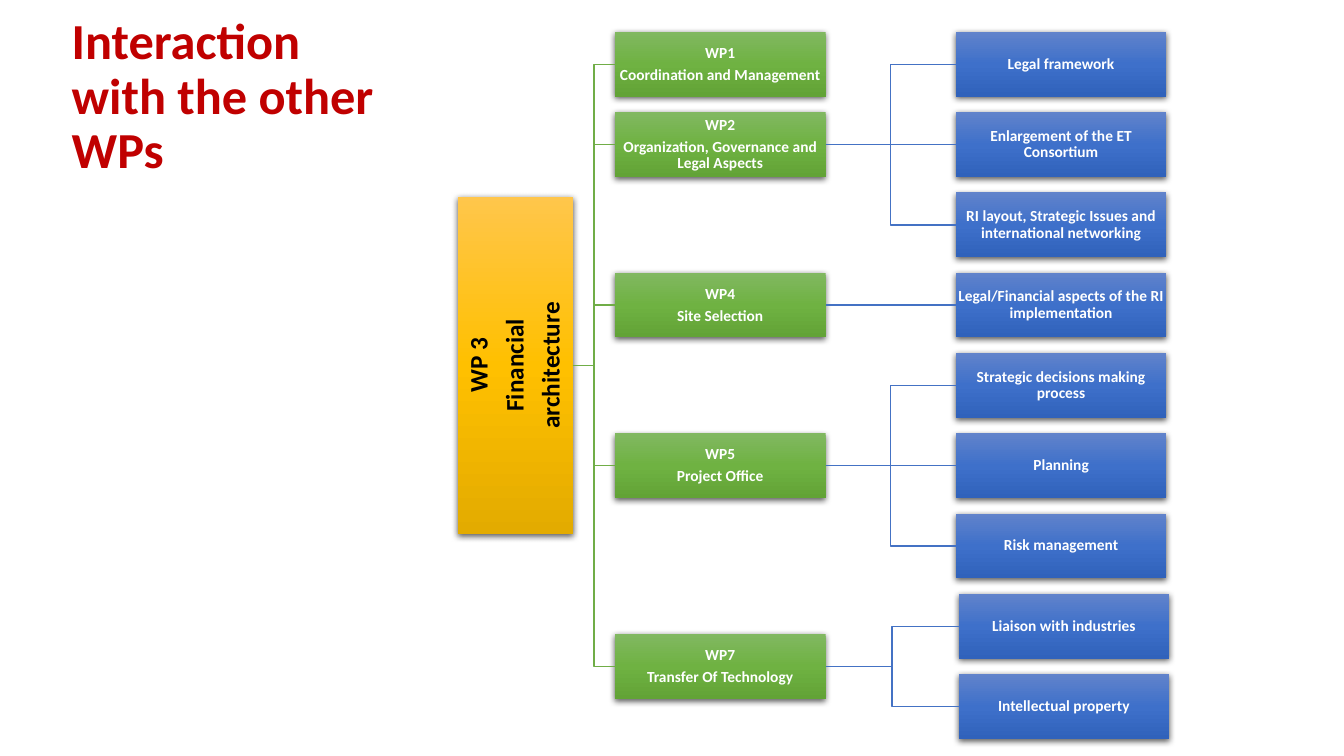
from lxml.etree import SubElement
from pptx import Presentation
from pptx.dml.color import RGBColor
from pptx.enum.shapes import MSO_CONNECTOR, MSO_SHAPE
from pptx.enum.text import MSO_ANCHOR, MSO_AUTO_SIZE, PP_ALIGN
from pptx.oxml import parse_xml
from pptx.oxml.ns import nsdecls, qn
from pptx.util import Pt

FONT = "Calibri"
GOLD = ("FFC64B", "FFC000", "E3AB00")
GREEN = ("81B861", "6FB242", "62A336")
BLUE = ("6183CB", "3E70CA", "3062BB")
GREEN_LINE, BLUE_LINE = "70AD47", "4472C4"
ROOT_W, ROOT_H = 82, 241
BOX_W, BOX_H = 150.5, 46.2

# Work package, its row, its topics with their rows, and the topics' shift
PACKS = [
    (["WP1", "Coordination and Management"], 0, [], 0),
    (["WP2", "Organization, Governance and Legal Aspects"], 1,
     [(0, "Legal framework"),
      (1, "Enlargement of the ET Consortium"),
      (2, "RI layout, Strategic Issues and international networking")], 0),
    (["WP4", "Site Selection"], 3,
     [(3, "Legal/Financial aspects of the RI implementation")], 0),
    (["WP5", "Project Office"], 5,
     [(4, "Strategic decisions making process"),
      (5, "Planning"),
      (6, "Risk management")], 0),
    (["WP7", "Transfer Of Technology"], 7.5,
     [(7, "Liaison with industries"),
      (8, "Intellectual property")], 2),
]
ROWS = 9
ROOT_ROW = (PACKS[0][1] + PACKS[-1][1]) / 2


def rgb(code):
    return RGBColor.from_string(code)


def add_run(para, text, size, color):
    run = para.add_run()
    run.text = text
    font = run.font
    font.name, font.size, font.bold = FONT, Pt(size), True
    font.color.rgb = rgb(color)


def shade(shape, colors):
    """Give the shape a top-down gradient and a soft shadow below it."""
    stops = "".join(
        f'<a:gs pos="{pos}"><a:srgbClr val="{color}"/></a:gs>'
        for pos, color in zip((0, 50000, 100000), colors))
    props = shape._element.spPr
    props.append(parse_xml(
        f'<a:gradFill {nsdecls("a")} rotWithShape="0"><a:gsLst>{stops}</a:gsLst>'
        '<a:lin ang="5400000" scaled="0"/></a:gradFill>'))
    shape.line.fill.background()
    props.append(parse_xml(
        f'<a:effectLst {nsdecls("a")}><a:outerShdw blurRad="{Pt(4.5)}" '
        f'dist="{Pt(1.5)}" dir="5400000" algn="ctr" rotWithShape="0">'
        '<a:srgbClr val="000000"><a:alpha val="63000"/></a:srgbClr>'
        '</a:outerShdw></a:effectLst>'))


def add_box(slide, x, y, w, h, lines, colors, size=11, ink="FFFFFF"):
    box = slide.shapes.add_shape(MSO_SHAPE.RECTANGLE, Pt(x), Pt(y), Pt(w), Pt(h))
    shade(box, colors)
    frame = box.text_frame
    frame.word_wrap = True
    frame.vertical_anchor = MSO_ANCHOR.MIDDLE
    frame.margin_left = frame.margin_right = Pt(0.7)
    frame.margin_top = frame.margin_bottom = Pt(0.7)
    for i, line in enumerate(lines):
        para = frame.add_paragraph() if i else frame.paragraphs[0]
        para.alignment = PP_ALIGN.CENTER
        para.line_spacing = 0.9
        if i < len(lines) - 1:
            para.space_after = Pt(0.35 * size)
        add_run(para, line, size, ink)
    return box


def add_elbow(slide, x1, y1, x2, y2, color):
    mid = (x1 + x2) / 2
    path = slide.shapes.build_freeform(Pt(x1), Pt(y1))
    path.add_line_segments(
        [(Pt(mid), Pt(y1)), (Pt(mid), Pt(y2)), (Pt(x2), Pt(y2))], close=False)
    line = path.convert_to_shape()
    line.shadow.inherit = False
    line.fill.background()
    line.line.color.rgb = rgb(color)
    line.line.width = Pt(1)


def join(slide, start, end, color):
    """Draw a straight line from the right side of one box to the next."""
    line = slide.shapes.add_connector(MSO_CONNECTOR.STRAIGHT, 0, 0, 0, 0)
    line.begin_connect(start, 3)
    line.end_connect(end, 1)
    line.line.color.rgb = rgb(color)
    line.line.width = Pt(1)
    SubElement(line._element.spPr, qn("a:effectLst"))


def add_title(slide, x, y, w, h):
    title = slide.shapes.title
    title.left, title.top, title.width, title.height = Pt(x), Pt(y), Pt(w), Pt(h)
    frame = title.text_frame
    frame.word_wrap = True
    frame.auto_size = MSO_AUTO_SIZE.NONE
    frame.vertical_anchor = MSO_ANCHOR.MIDDLE
    para = frame.paragraphs[0]
    para.alignment = PP_ALIGN.LEFT
    para.line_spacing = 0.9
    for i, line in enumerate(["Interaction", "with the other", "WPs"]):
        if i:
            para.add_line_break()
        add_run(para, line, 36, "C00000")


def add_tree(slide, x, y, w, h):
    pitch = (h - BOX_H) / (ROWS - 1)
    pack_x, topic_x = x + 112, x + w - BOX_W

    def mid(row):
        return y + BOX_H / 2 + row * pitch

    # The root is a wide box turned a quarter to the left
    root = add_box(slide, x + (ROOT_W - ROOT_H) / 2, mid(ROOT_ROW) - ROOT_W / 2,
                   ROOT_H, ROOT_W, ["WP 3", "Financial", "architecture"],
                   GOLD, 18, "000000")
    root.rotation = 270

    for lines, row, topics, shift in PACKS:
        pack = add_box(slide, pack_x, y + row * pitch, BOX_W, BOX_H, lines, GREEN)
        add_elbow(slide, x + ROOT_W, mid(ROOT_ROW), pack_x, mid(row), GREEN_LINE)
        for place, text in topics:
            left = topic_x + shift
            topic = add_box(slide, left, y + place * pitch, BOX_W, BOX_H,
                            [text], BLUE)
            if place == row:
                join(slide, pack, topic, BLUE_LINE)
            else:
                add_elbow(slide, pack_x + BOX_W, mid(row), left, mid(place),
                          BLUE_LINE)


def main():
    deck = Presentation()
    deck.slide_width, deck.slide_height = Pt(960), Pt(540)
    slide = deck.slides.add_slide(deck.slide_layouts[5])
    add_title(slide, 44, 23, 309, 94)
    add_tree(slide, 327.2, 22.8, 506, 505)
    deck.save("out.pptx")


if __name__ == "__main__":
    main()
